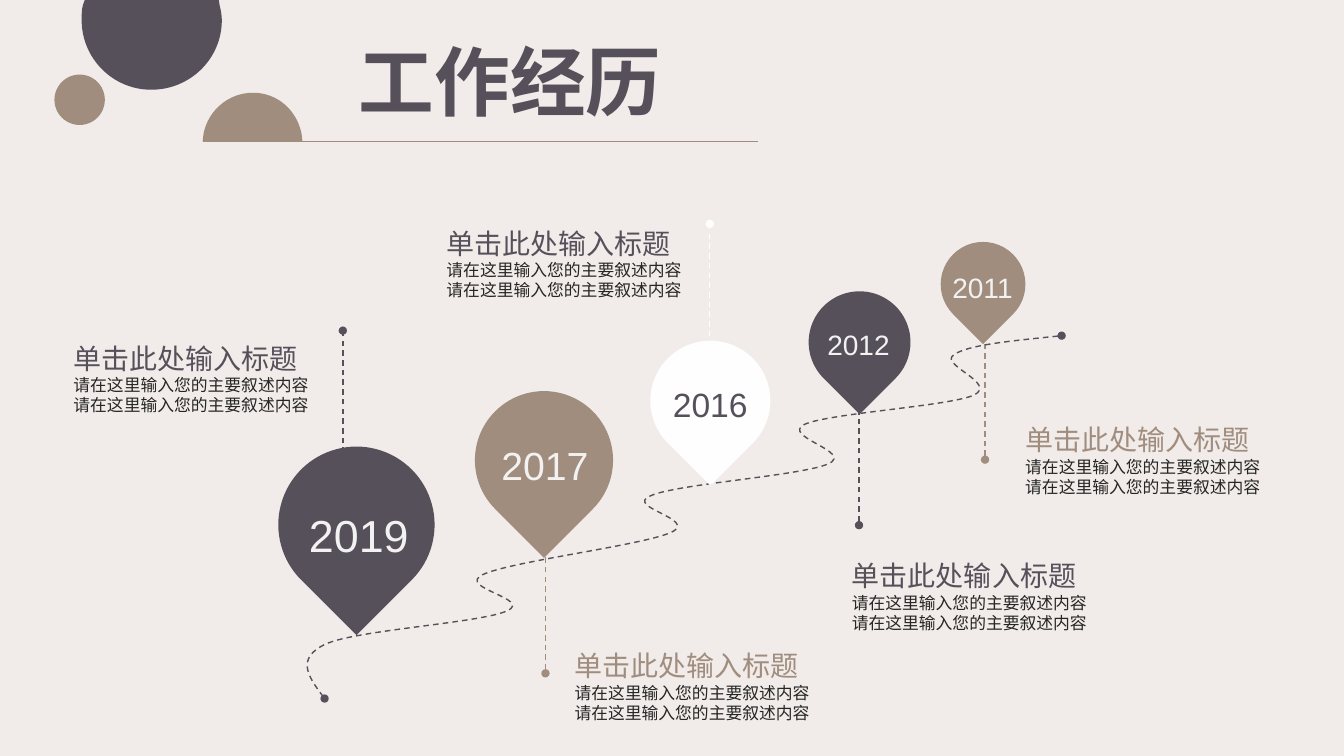
import pptx
import pptx.util
import pptx.dml.color
import pptx.enum.dml
import pptx.enum.shapes
import pptx.enum.text
import pptx.oxml.ns
import lxml.etree

Inches = pptx.util.Inches
Pt = pptx.util.Pt
RGBColor = pptx.dml.color.RGBColor
SHAPE = pptx.enum.shapes.MSO_SHAPE
ALIGN = pptx.enum.text.PP_ALIGN
qn = pptx.oxml.ns.qn

PLUM = RGBColor(0x56, 0x50, 0x5A)
TAUPE = RGBColor(0xA0, 0x8D, 0x7E)
WHITE = RGBColor(0xFE, 0xFE, 0xFE)
PALE = RGBColor(0xF2, 0xF2, 0xF2)
INK = RGBColor(0x26, 0x26, 0x26)
CREAM = RGBColor(0xF1, 0xEC, 0xE9)
CJK_FONT = "Noto Sans CJK SC"
YEAR_FONT = "Arial"

# Content
HEADING = "工作经历"
ENTRY_TITLE = "单击此处输入标题"
ENTRY_LINES = ["请在这里输入您的主要叙述内容"] * 2

# Entry texts: left, top, title colour
ENTRIES = [(4.33, 2.18, PLUM), (10.07, 4.13, TAUPE), (8.35, 5.48, PLUM),
           (5.6, 6.37, TAUPE), (0.63, 3.32, PLUM)]

# Pins: year, left, top, size, fill, text colour, text size, text box
PINS = [
    ("2011", 9.33, 2.4, 0.84, TAUPE, PALE, 20, (9.26, 2.63, 0.97, 0.44)),
    ("2012", 8.02, 2.89, 1.01, PLUM, PALE, 20, (8.03, 3.2, 0.97, 0.44)),
    ("2016", 6.45, 3.38, 1.19, WHITE, PLUM, 24, (6.56, 3.76, 0.97, 0.5)),
    ("2017", 4.71, 3.88, 1.37, TAUPE, PALE, 28, (4.84, 4.33, 1.13, 0.57)),
    ("2019", 2.76, 4.43, 1.55, PLUM, PALE, 32, (2.93, 4.99, 1.26, 0.64)),
]

# Stems: x, top, colour
STEM_LENGTH = 1.25
STEMS = [(3.4, 3.28, PLUM), (5.41, 5.43, TAUPE), (8.52, 3.96, PLUM),
         (9.77, 3.31, TAUPE), (7.04, 2.22, WHITE)]

# Outlines: a pair is a straight step, six numbers are a cubic curve
BIG_CIRCLE = [(2.17, 0), (0.84, 0), (0.82, 0.06),
              (0.81, 0.1, 0.81, 0.15, 0.81, 0.2),
              (0.81, 0.58, 1.12, 0.89, 1.5, 0.89),
              (1.89, 0.89, 2.2, 0.58, 2.2, 0.2),
              (2.2, 0.15, 2.19, 0.1, 2.18, 0.06)]
HALF_CIRCLE = [(2.51, 0.92), (2.27, 0.92, 2.07, 1.09, 2.02, 1.32),
               (2.01, 1.4), (3, 1.4), (2.99, 1.32),
               (2.94, 1.09, 2.75, 0.92, 2.51, 0.92)]
TRAIL = [(10.53, 3.33),
         (10.06, 3.38, 9.6, 3.42, 9.46, 3.52), (9.31, 3.62, 9.9, 3.8, 9.66, 3.92),
         (9.41, 4.03, 8.22, 4.1, 7.98, 4.21), (7.74, 4.33, 8.47, 4.48, 8.22, 4.6),
         (7.96, 4.72, 6.71, 4.8, 6.45, 4.92), (6.19, 5.03, 6.93, 5.15, 6.66, 5.28),
         (6.38, 5.41, 5.06, 5.57, 4.79, 5.7), (4.52, 5.83, 5.29, 5.94, 5.03, 6.06),
         (4.77, 6.18, 3.53, 6.25, 3.23, 6.39), (2.93, 6.53, 3.07, 6.73, 3.22, 6.93)]

deck = pptx.Presentation()
deck.slide_width, deck.slide_height = Inches(13.33), Inches(7.5)
slide = deck.slides.add_slide(deck.slide_layouts[6])
slide.background.fill.solid()
slide.background.fill.fore_color.rgb = CREAM


def paint(shape, colour):
    shape.shadow.inherit = False
    shape.fill.solid()
    shape.fill.fore_color.rgb = colour
    shape.line.fill.background()


def dash_with_dots(line, colour):
    line.color.rgb = colour
    line.width = Pt(1)
    line.dash_style = pptx.enum.dml.MSO_LINE.DASH
    for end in ("a:headEnd", "a:tailEnd"):
        lxml.etree.SubElement(line.color._xFill.getparent(), qn(end), type="oval")


def add_line(x1, y1, x2, y2):
    line = slide.shapes.add_connector(
        pptx.enum.shapes.MSO_CONNECTOR.STRAIGHT,
        Inches(x1), Inches(y1), Inches(x2), Inches(y2))
    lxml.etree.SubElement(line._element.spPr, qn("a:effectLst"))
    return line.line


def add_outline(steps, box, closed):
    """Freeform spanning box, its path made of straight and cubic steps."""
    left, top, width, height = box
    right, bottom = left + width, top + height
    builder = slide.shapes.build_freeform(Inches(left), Inches(top), scale=1.0)
    builder.add_line_segments([(Inches(right), Inches(top)),
                               (Inches(right), Inches(bottom)),
                               (Inches(left), Inches(bottom))])
    shape = builder.convert_to_shape()
    path = shape._element.spPr.find(".//" + qn("a:path"))
    for child in list(path):
        path.remove(child)
    for index, step in enumerate(steps):
        kind = "a:cubicBezTo" if len(step) == 6 else "a:lnTo" if index else "a:moveTo"
        move = lxml.etree.SubElement(path, qn(kind))
        for x, y in zip(step[::2], step[1::2]):
            lxml.etree.SubElement(move, qn("a:pt"), x=str(Inches(x - left)),
                                  y=str(Inches(y - top)))
    if closed:
        lxml.etree.SubElement(path, qn("a:close"))
    return shape


def add_text(shapes, box, lines, wrap=True, align=ALIGN.LEFT):
    """Each line: text, size, colour, font, bold, exact line height or None."""
    frame = shapes.add_textbox(*map(Inches, box)).text_frame
    frame.word_wrap = wrap
    frame.auto_size = pptx.enum.text.MSO_AUTO_SIZE.SHAPE_TO_FIT_TEXT
    for index, (text, size, colour, font, bold, height) in enumerate(lines):
        paragraph = frame.add_paragraph() if index else frame.paragraphs[0]
        paragraph.alignment = align
        if height:
            paragraph.line_spacing = Pt(height)
        run = paragraph.add_run()
        run.text = text
        run.font.size = Pt(size)
        run.font.bold = bold
        run.font.color.rgb = colour
        run.font.name = font
        lxml.etree.SubElement(run.font._element, qn("a:ea"), typeface=font)


# Header decoration and heading
paint(add_outline(BIG_CIRCLE, (0.81, 0, 1.39, 0.89), True), PLUM)
small_circle = slide.shapes.add_shape(
    SHAPE.OVAL, Inches(0.54), Inches(0.74), Inches(0.5), Inches(0.5))
paint(small_circle, TAUPE)
paint(add_outline(HALF_CIRCLE, (2.01, 0.92, 0.99, 0.48), True), TAUPE)
underline = add_line(2.01, 1.4, 7.52, 1.4)
underline.color.rgb = TAUPE
underline.width = Pt(0.5)
add_text(slide.shapes, (3.46, 0.23, 3.25, 1.01),
         [(HEADING, 54, PLUM, CJK_FONT, True, 70)], wrap=False)

# Stems and winding trail
for x, top, colour in STEMS:
    dash_with_dots(add_line(x, top + STEM_LENGTH, x, top), colour)
trail = add_outline(TRAIL, (3.05, 3.33, 7.47, 3.59), False)
trail.shadow.inherit = False
trail.fill.background()
dash_with_dots(trail.line, PLUM)

# Year pins
for year, left, top, size, fill, colour, points, label_box in PINS:
    pin = slide.shapes.add_group_shape()
    drop = pin.shapes.add_shape(SHAPE.TEAR, Inches(left), Inches(top),
                                Inches(size), Inches(size))
    drop.rotation = 135
    paint(drop, fill)
    add_text(pin.shapes, label_box,
             [(year, points, colour, YEAR_FONT, False, None)], align=ALIGN.CENTER)

# Entry texts
for left, top, colour in ENTRIES:
    lines = [(ENTRY_TITLE, 20, colour, CJK_FONT, False, 25)]
    lines += [(text, 12, INK, CJK_FONT, False, 14.5) for text in ENTRY_LINES]
    add_text(slide.shapes, (left, top, 2.56, 1.38), lines, wrap=False)

deck.save("out.pptx")
